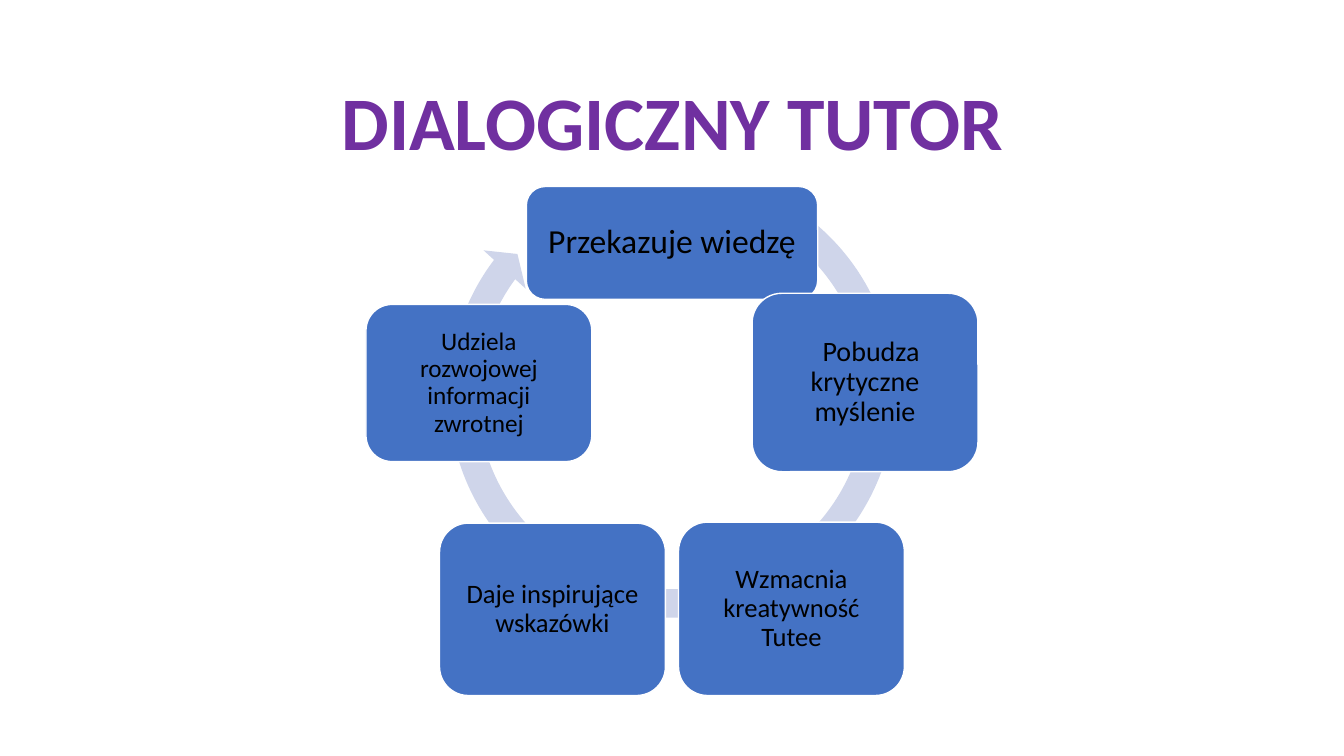
from pptx import Presentation
from pptx import util as u
from pptx.dml.color import RGBColor
from pptx.enum import shapes, text

PX = 9144  # EMU per px, 100 px to the inch


def px(*lengths):
    return [length * PX for length in lengths]


def colour(hex_string):
    return RGBColor.from_string(hex_string)


def write(frame, words, size, ink, bold=False, insets=(0, 0, 0, 0), indent=0):
    """Fill a text frame with one centred paragraph."""
    frame.word_wrap = True
    frame.auto_size = text.MSO_AUTO_SIZE.NONE
    frame.vertical_anchor = text.MSO_ANCHOR.MIDDLE
    frame.margin_left, frame.margin_top, frame.margin_right, frame.margin_bottom = insets
    paragraph = frame.paragraphs[0]
    paragraph.alignment = text.PP_ALIGN.CENTER
    paragraph.line_spacing = 0.9
    paragraph.space_before = u.Pt(0)
    if indent:
        paragraph._p.get_or_add_pPr().set("indent", str(indent * PX))
    run = paragraph.add_run()
    run.text = words
    run.font.name = "Calibri"
    run.font.size = u.Pt(size)
    run.font.bold = bold
    run.font.color.rgb = colour(ink)


class CycleSlide:
    PURPLE, BLUE, PALE = "7030A0", "4472C4", "CFD5EA"
    BLACK, WHITE = "000000", "FFFFFF"

    def __init__(self, deck):
        self.slide = deck.slides.add_slide(deck.slide_layouts[5])

    def title(self, words, box, below):
        heading = self.slide.shapes.title
        heading.left, heading.top, heading.width, heading.height = px(*box)
        write(heading.text_frame, words, 54, self.PURPLE, bold=True,
              insets=px(10, 5, 10, below))

    def shape(self, kind, box, fill):
        item = self.slide.shapes.add_shape(kind, *px(*box))
        item.shadow.inherit = False
        item.fill.solid()
        item.fill.fore_color.rgb = colour(fill)
        return item

    def ring(self, box, adjustments):
        arrow = self.shape(shapes.MSO_SHAPE.CIRCULAR_ARROW, box, self.PALE)
        arrow.line.fill.background()
        for index, value in enumerate(adjustments):
            arrow.adjustments[index] = value

    def step(self, words, box, size, indent=0):
        card = self.shape(shapes.MSO_SHAPE.ROUNDED_RECTANGLE, box, self.BLUE)
        card.line.color.rgb = colour(self.WHITE)
        card.line.width = u.Pt(1)
        # The inset grows with the type size
        write(card.text_frame, words, size, self.BLACK,
              insets=[u.Pt(size * 0.3)] * 4, indent=indent)


def main():
    deck = Presentation()
    deck.slide_width, deck.slide_height = px(1333, 750)
    cycle = CycleSlide(deck)

    # Heading, raised by a deep bottom inset
    cycle.title("DIALOGICZNY TUTOR", (92, 40, 1150, 252), below=87)

    # Ring behind the steps
    cycle.ring((431, 156, 471, 471), (0.06, 3.31, 130.07, 178.74, 0.06))

    # Steps, clockwise from the top
    side = 224
    cycle.step("Przekazuje wiedzę", (522, 185, 289, 112), 24)
    cycle.step("Pobudza krytyczne myślenie", (746, 291, side, 177), 20, indent=12)
    cycle.step("Wzmacnia kreatywność Tutee", (673, 518, side, 172), 19)
    cycle.step("Daje inspirujące wskazówki", (436, 519, side, 171), 19)
    cycle.step("Udziela rozwojowej informacji zwrotnej", (363, 302, side, 156), 18)

    deck.save("out.pptx")


if __name__ == "__main__":
    main()
